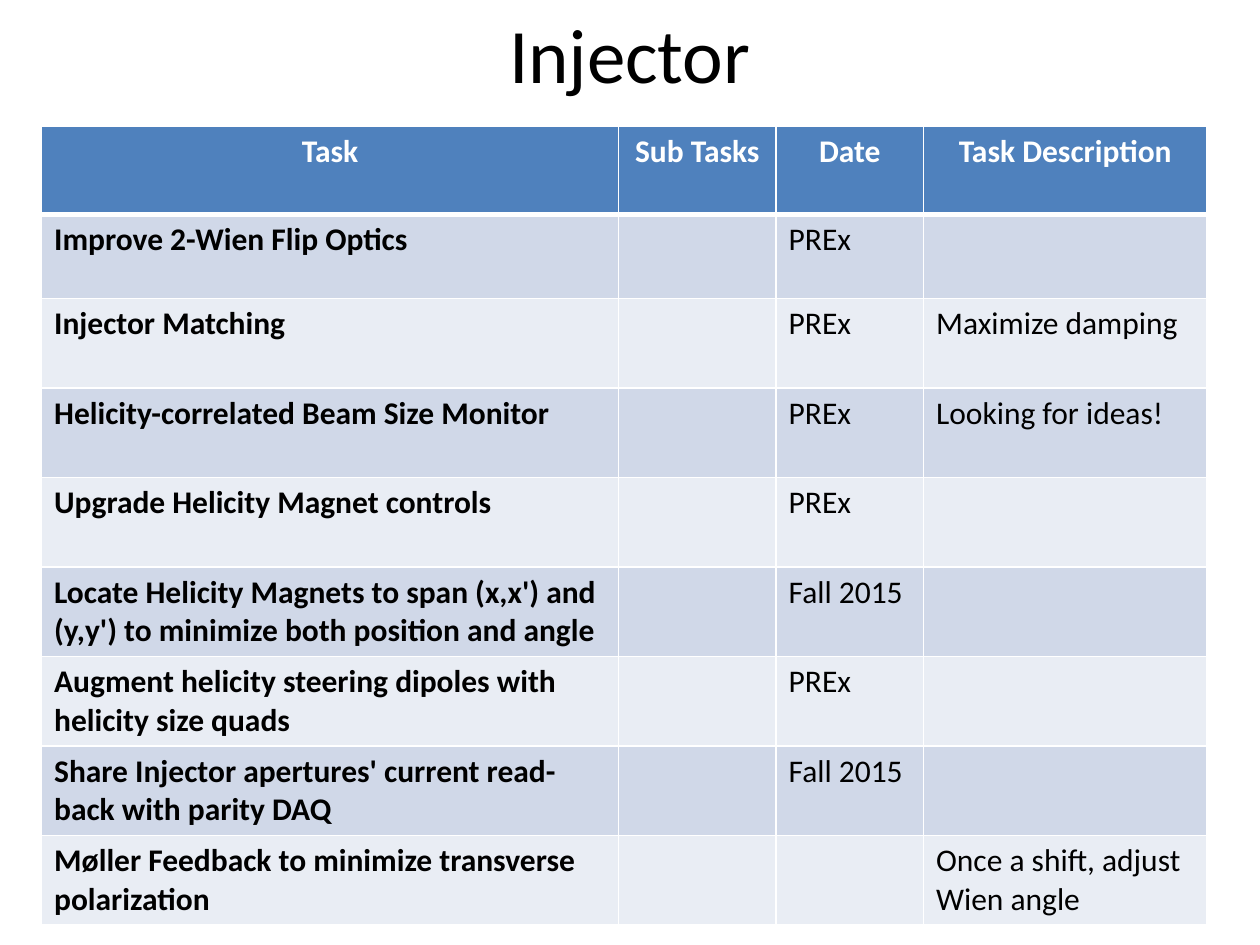
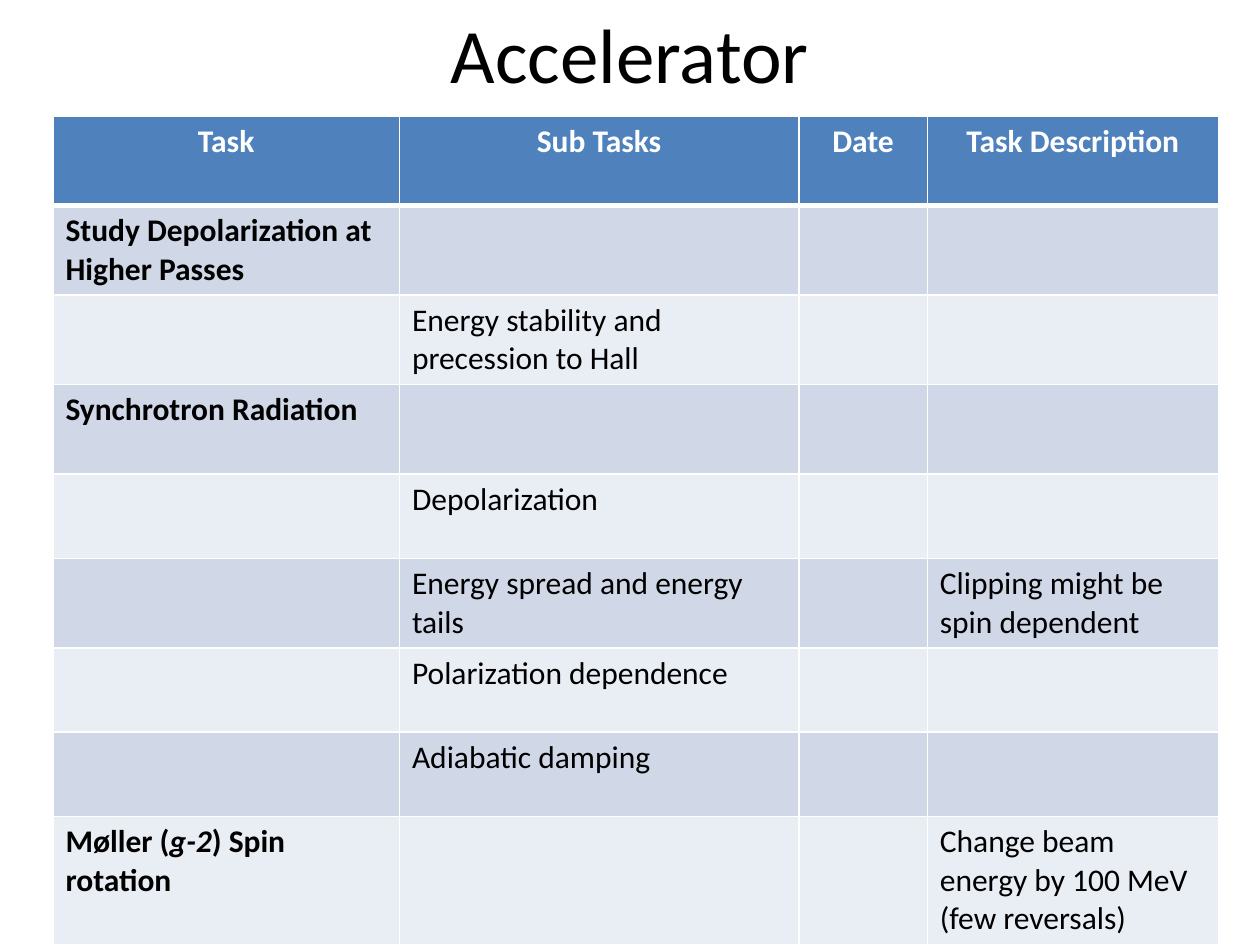
from dataclasses import dataclass

from lxml import etree
from pptx import Presentation
from pptx.dml.color import RGBColor
from pptx.enum.text import MSO_ANCHOR, PP_ALIGN
from pptx.oxml.ns import qn
from pptx.util import Inches, Pt

CENTER, LEFT = PP_ALIGN.CENTER, PP_ALIGN.LEFT
MIDDLE = MSO_ANCHOR.MIDDLE
TITLE_ONLY = 5


@dataclass(frozen=True)
class Theme:
    font: str = "Calibri"
    title_size: int = 44
    body_size: int = 18
    text: str = "000000"
    white: str = "FFFFFF"
    header: str = "4F81BD"
    bands: tuple = ("D0D8E8", "E9EDF4")
    rule: int = 1
    header_rule: int = 3


theme = Theme()
HEADINGS = ("Task", "Sub Tasks", "Date", "Task Description")

# Cell text: a line break starts a paragraph, asterisks enclose italics
SLIDES = [
    {
        "title": "Injector",
        "at": (0.33, 1),
        "cols": (4.58, 1.25, 1.17, 2.25),
        "heights": (0.7, 0.67) + (0.71,) * 7,
        "rows": [
            ("Improve 2-Wien Flip Optics", "", "PREx", ""),
            ("Injector Matching", "", "PREx", "Maximize damping"),
            ("Helicity-correlated Beam Size Monitor", "", "PREx", "Looking for ideas!"),
            ("Upgrade Helicity Magnet controls", "", "PREx", ""),
            ("Locate Helicity Magnets to span (x,x') and (y,y') to minimize "
             "both position and angle", "", "Fall 2015", ""),
            ("Augment helicity steering dipoles with helicity size quads", "", "PREx", ""),
            ("Share Injector apertures' current read-back with parity DAQ",
             "", "Fall 2015", ""),
            ("Møller Feedback to minimize transverse polarization", "", "",
             "Once a shift, adjust Wien angle"),
        ],
    },
    {
        "title": "Accelerator",
        "at": (0.42, 0.92),
        "cols": (2.75, 3.17, 1.02, 2.31),
        "heights": (0.71,) * 4 + (0.67, 0.71, 0.67, 0.67, 1.01),
        "rows": [
            ("Study Depolarization at Higher Passes", "", "", ""),
            ("", "Energy stability and precession to Hall", "", ""),
            ("Synchrotron Radiation", "", "", ""),
            ("", "Depolarization", "", ""),
            ("", "Energy spread and energy tails", "", "Clipping might be spin dependent"),
            ("", "Polarization dependence", "", ""),
            ("", "Adiabatic damping", "", ""),
            ("Møller (*g-2*) Spin rotation", "", "",
             "Change beam energy by 100 MeV\n(few reversals)"),
        ],
    },
]


def add_run(p, text, size, color, bold=False, italic=False):
    r = p.add_run()
    r.text = text
    r.font.name = theme.font
    r.font.size = Pt(size)
    r.font.bold = bold
    r.font.italic = italic
    r.font.color.rgb = RGBColor.from_string(color)


def set_borders(cell, top, bottom):
    tc_pr = cell._tc.get_or_add_tcPr()
    widths = {"a:lnL": theme.rule, "a:lnR": theme.rule, "a:lnT": top, "a:lnB": bottom}
    for tag, width in widths.items():
        ln = etree.SubElement(tc_pr, qn(tag), w=str(Pt(width)))
        fill = etree.SubElement(ln, qn("a:solidFill"))
        etree.SubElement(fill, qn("a:srgbClr"), val=theme.white)


prs = Presentation()
prs.slide_width, prs.slide_height = Inches(10), Inches(7.5)

for content in SLIDES:
    s = prs.slides.add_slide(prs.slide_layouts[TITLE_ONLY])

    # Title
    title = s.shapes.title
    title.left, title.top = Inches(0.5), Inches(0)
    title.width, title.height = Inches(9), Inches(0.83)
    tf = title.text_frame
    tf.vertical_anchor = MIDDLE
    p = tf.paragraphs[0]
    p.alignment = CENTER
    add_run(p, content["title"], theme.title_size, theme.text)

    # Table grid
    rows = [HEADINGS] + content["rows"]
    cols, heights = content["cols"], content["heights"]
    left, top = content["at"]
    table = s.shapes.add_table(
        len(rows), len(cols), Inches(left), Inches(top),
        Inches(sum(cols)), Inches(sum(heights))).table
    for column, width in zip(table.columns, cols):
        column.width = Inches(width)
    for row, height in zip(table.rows, heights):
        row.height = Inches(height)

    # Cells: header row, then alternating bands with a bold task column
    for i, row in enumerate(rows):
        is_header = i == 0
        for j, text in enumerate(row):
            cell = table.cell(i, j)
            set_borders(cell,
                        theme.header_rule if i == 1 else theme.rule,
                        theme.header_rule if is_header else theme.rule)
            cell.fill.solid()
            cell.fill.fore_color.rgb = RGBColor.from_string(
                theme.header if is_header else theme.bands[(i - 1) % 2])
            if not text:
                continue
            tf = cell.text_frame
            for k, line in enumerate(text.split("\n")):
                p = tf.add_paragraph() if k else tf.paragraphs[0]
                p.alignment = CENTER if is_header else LEFT
                for n, part in enumerate(line.split("*")):
                    add_run(p, part, theme.body_size,
                            theme.white if is_header else theme.text,
                            bold=is_header or j == 0, italic=n % 2 == 1)

prs.save("out.pptx")
